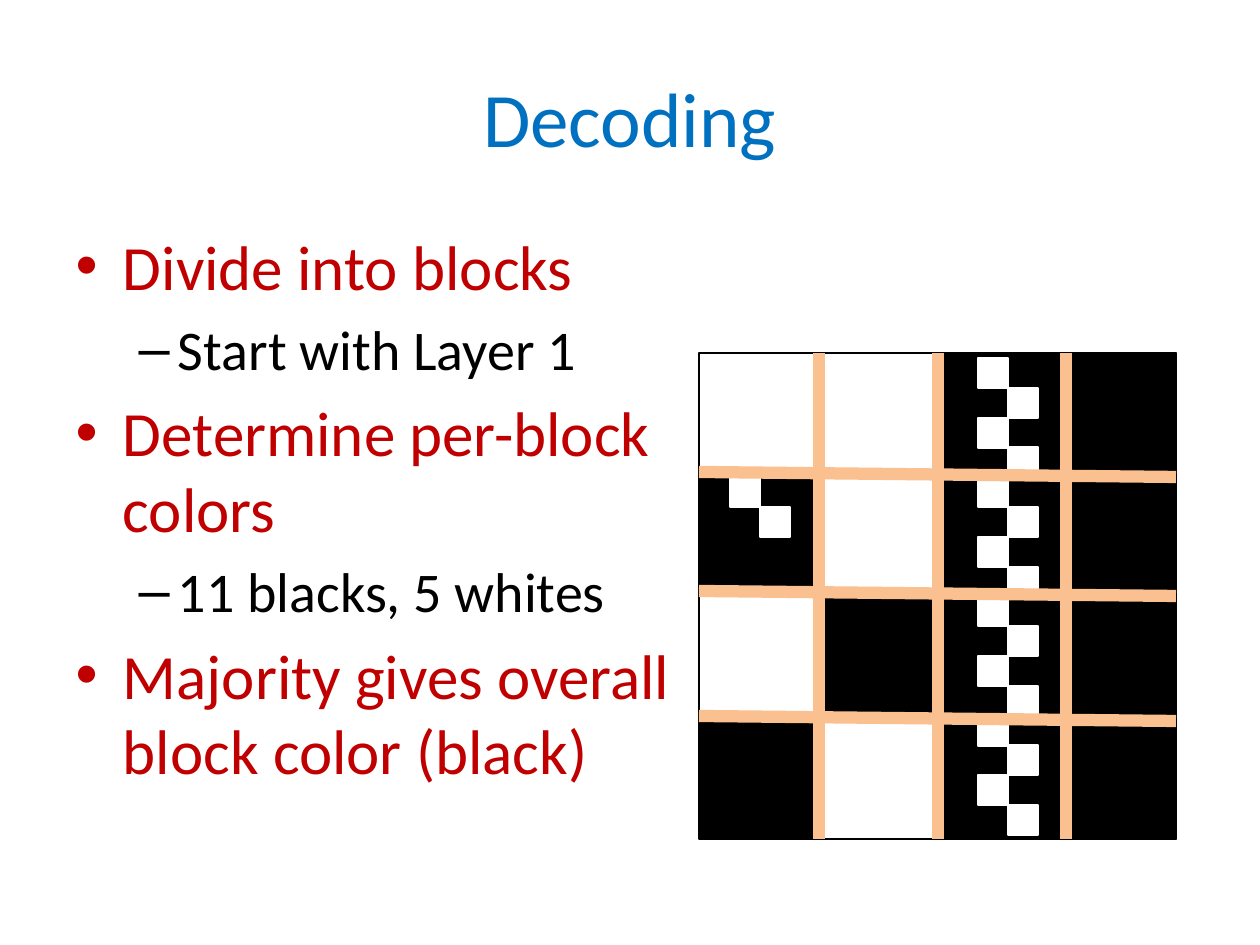
import dataclasses

import pptx
import pptx.dml.color
import pptx.enum.shapes
import pptx.oxml
import pptx.oxml.ns
import pptx.util

PX_PER_INCH = 126
FONT = "Calibri"
BLACK, WHITE, PEACH = "000000", "FFFFFF", "FAC090"
BLUE, RED = "0070C0", "C00000"


@dataclasses.dataclass(frozen=True)
class Box:
    left: int
    top: int
    width: int
    height: int


@dataclasses.dataclass(frozen=True)
class Divider:
    x1: int
    y1: int
    x2: int
    y2: int


@dataclasses.dataclass(frozen=True)
class Point:
    text: str
    level: int = 0


POINTS = [
    Point("Divide into blocks"),
    Point("Start with Layer 1", 1),
    Point("Determine per-block colors"),
    Point("11 blacks, 5 whites", 1),
    Point("Majority gives overall block color (black)"),
]
LEVEL_STYLES = [(36, RED), (32, BLACK)]

CODE = Box(699, 353, 477, 486)
BLACK_HALF = Box(938, 353, 238, 486)
BLACK_BLOCKS = [Box(699, 475, 118, 121), Box(819, 596, 118, 121), Box(699, 718, 118, 121)]
CELL = 30
CELL_PITCH = 29.8
FIRST_CELL_TOP = 358
DIVIDER_SLANT = 5
ROW_DIVIDERS = [472, 591, 716]
COLUMN_DIVIDERS = [819, 938, 1066]


def px(length: float) -> int:
    return round(length * 914400 / PX_PER_INCH)


def colour(hex_code: str) -> pptx.dml.color.RGBColor:
    return pptx.dml.color.RGBColor.from_string(hex_code)


def place(shape, box: Box) -> None:
    shape.left, shape.top = px(box.left), px(box.top)
    shape.width, shape.height = px(box.width), px(box.height)


def style_text(paragraph, size: int, hex_code: str) -> None:
    paragraph.font.name = FONT
    paragraph.font.size = pptx.util.Pt(size)
    paragraph.font.color.rgb = colour(hex_code)


def draw_rectangle(shapes, box: Box, fill: str | None, line: str | None) -> None:
    rectangle = shapes.add_shape(
        pptx.enum.shapes.MSO_SHAPE.RECTANGLE,
        px(box.left), px(box.top), px(box.width), px(box.height),
    )
    rectangle.shadow.inherit = False
    if fill:
        rectangle.fill.solid()
        rectangle.fill.fore_color.rgb = colour(fill)
    else:
        rectangle.fill.background()
    if line:
        rectangle.line.color.rgb = colour(line)
        rectangle.line.width = pptx.util.Pt(0.75)
    else:
        rectangle.line.fill.background()


def draw_zigzag(shapes, left: int, rows: range) -> None:
    """Stack white cells that alternate between two columns."""
    for row in rows:
        cell = Box(
            left + round(row % 2 * CELL_PITCH),
            FIRST_CELL_TOP + round(row * CELL_PITCH),
            CELL, CELL,
        )
        draw_rectangle(shapes, cell, WHITE, WHITE)


def draw_divider(shapes, divider: Divider) -> None:
    connector = shapes.add_connector(
        pptx.enum.shapes.MSO_CONNECTOR.STRAIGHT,
        px(divider.x1), px(divider.y1), px(divider.x2), px(divider.y2),
    )
    connector.line.color.rgb = colour(PEACH)
    connector.line.width = pptx.util.Pt(7)
    properties = connector._element.spPr
    properties.append(pptx.oxml.parse_xml(f"<a:effectLst {pptx.oxml.ns.nsdecls('a')}/>"))


def write_text(slide) -> None:
    title = slide.shapes.title
    place(title, Box(63, 38, 1134, 158))
    title.text_frame.text = "Decoding"
    style_text(title.text_frame.paragraphs[0], 44, BLUE)

    body = slide.placeholders[1]
    place(body, Box(63, 221, 626, 624))
    body.text_frame.text = "\n".join(point.text for point in POINTS)
    for paragraph, point in zip(body.text_frame.paragraphs, POINTS):
        paragraph.level = point.level
        style_text(paragraph, *LEVEL_STYLES[point.level])


def draw_code(slide) -> None:
    code = slide.shapes.add_group_shape().shapes
    draw_rectangle(code, CODE, None, BLACK)
    draw_rectangle(code, BLACK_HALF, BLACK, BLACK)
    for block in BLACK_BLOCKS:
        draw_rectangle(code, block, BLACK, None)
    draw_zigzag(code, 730, range(4, 6))
    draw_zigzag(code, 978, range(16))

    right, bottom = CODE.left + CODE.width, CODE.top + CODE.height
    for y in ROW_DIVIDERS:
        draw_divider(slide.shapes, Divider(CODE.left, y, right, y + DIVIDER_SLANT))
    for x in COLUMN_DIVIDERS:
        draw_divider(slide.shapes, Divider(x, CODE.top, x, bottom))


def main() -> None:
    presentation = pptx.Presentation()
    presentation.slide_width, presentation.slide_height = px(1260), px(945)
    slide = presentation.slides.add_slide(presentation.slide_layouts[1])
    write_text(slide)
    draw_code(slide)
    presentation.save("out.pptx")


if __name__ == "__main__":
    main()
